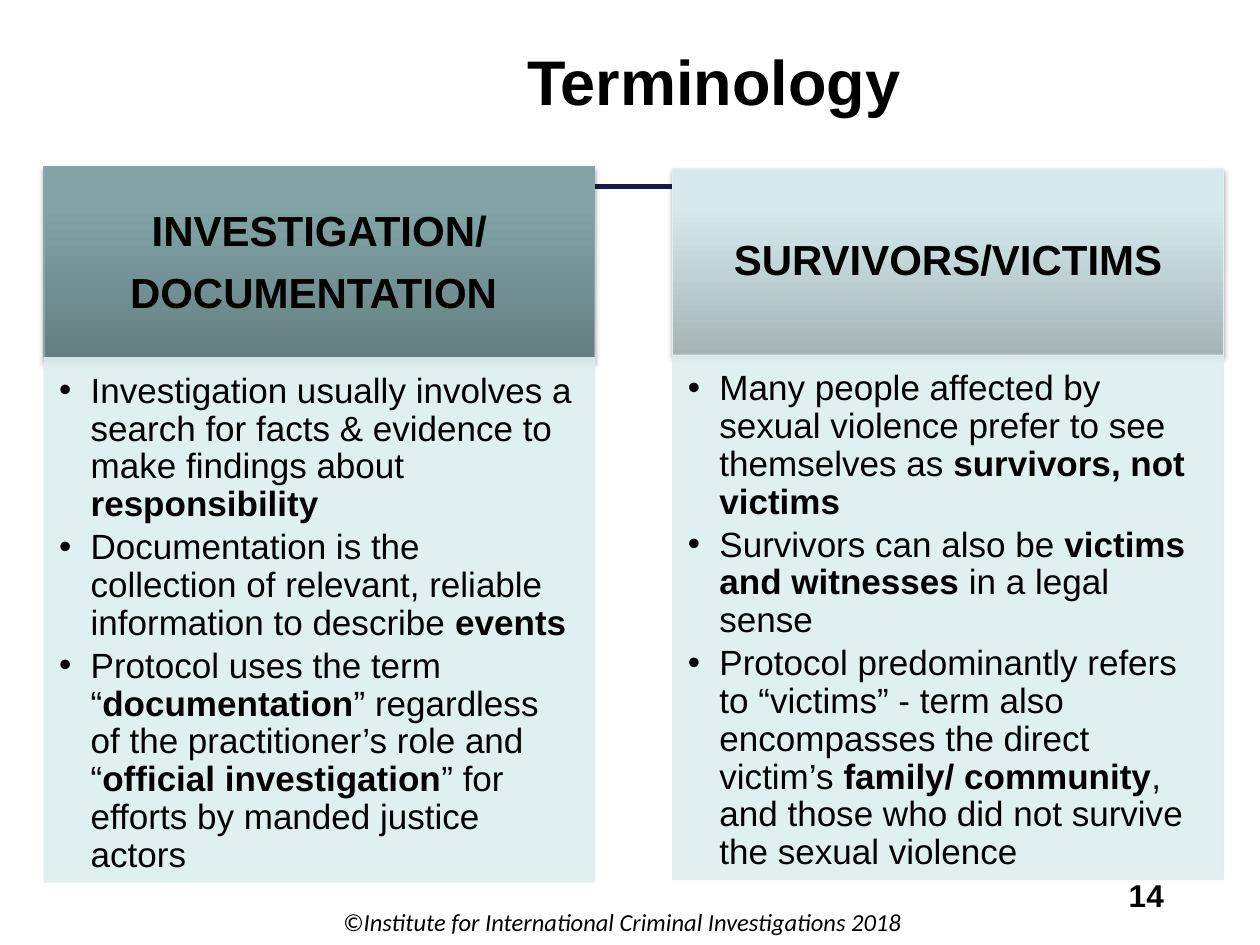
from copy import deepcopy
from dataclasses import dataclass

from lxml import etree
from pptx import Presentation
from pptx.dml.color import RGBColor
from pptx.enum.shapes import MSO_CONNECTOR, MSO_SHAPE
from pptx.enum.text import MSO_ANCHOR, PP_ALIGN
from pptx.oxml.ns import qn
from pptx.util import Inches, Pt

RECTANGLE, STRAIGHT = MSO_SHAPE.RECTANGLE, MSO_CONNECTOR.STRAIGHT
LEFT, CENTER = PP_ALIGN.LEFT, PP_ALIGN.CENTER
TOP, MIDDLE, BOTTOM = MSO_ANCHOR.TOP, MSO_ANCHOR.MIDDLE, MSO_ANCHOR.BOTTOM


@dataclass(frozen=True)
class Theme:
    font: str = "Arial"
    footer_font: str = "Calibri"
    text: str = "000000"
    rule: str = "19194D"
    panel: str = "DDEFF0"
    teal: tuple = ("647E81", "82A4A7", "82A6A9")
    teal_edge: str = "8AA6A8"
    pale: tuple = ("A5B5B6", "D6EAEC", "D6ECEE")
    pale_edge: str = "DFF0F1"
    title_size: int = 36
    heading_size: int = 24
    body_size: int = 20
    number_size: int = 18
    footer_size: int = 14


def rgb(value):
    return RGBColor.from_string(value)


def add_xml(parent, tag, **attributes):
    values = {name: str(value) for name, value in attributes.items()}
    return etree.SubElement(parent, qn(tag), values)


class SlideBuilder:
    def __init__(self, slide, theme):
        self.slide = slide
        self.theme = theme

    def fill_text(self, shape, paragraphs, size, anchor=TOP, align=LEFT,
                  insets=(0.1, 0.05, 0.1, 0.05), bullets=False, spacing=None, font=None,
                  **run_format):
        """Put paragraphs in a shape; parts between * marks are bold."""
        frame = shape.text_frame
        frame_format = {"word_wrap": True, "vertical_anchor": anchor}
        sides = ("margin_left", "margin_top", "margin_right", "margin_bottom")
        frame_format.update(zip(sides, map(Inches, insets)))
        for name, value in frame_format.items():
            setattr(frame, name, value)
        for index, text in enumerate(paragraphs):
            paragraph = frame.add_paragraph() if index else frame.paragraphs[0]
            paragraph.alignment = align
            if spacing is not None:
                paragraph.line_spacing = 0.9
                paragraph.space_after = Pt(spacing)
            if bullets:
                properties = paragraph._p.get_or_add_pPr()
                properties.set("marL", str(Inches(0.25)))
                properties.set("indent", str(-Inches(0.25)))
                add_xml(properties, "a:buFont", typeface=self.theme.font)
                add_xml(properties, "a:buChar", char="•")
            for part, words in enumerate(text.split("*")):
                if not words:
                    continue
                run = paragraph.add_run()
                run.text = words
                run_style = {"name": font or self.theme.font, "size": Pt(size),
                             "bold": part % 2 == 1, **run_format}
                for name, value in run_style.items():
                    setattr(run.font, name, value)
                run.font.color.rgb = rgb(self.theme.text)

    def text(self, box, text, size, **style):
        self.fill_text(self.slide.shapes.add_textbox(*map(Inches, box)), [text], size, **style)

    def rule(self, start, end):
        line = self.slide.shapes.add_connector(STRAIGHT, *map(Inches, start + end))
        line.line.color.rgb = rgb(self.theme.rule)
        line.line.width = Pt(2.5)
        add_xml(line._element.spPr, "a:effectLst")

    def rectangle(self, box, edge):
        shape = self.slide.shapes.add_shape(RECTANGLE, *map(Inches, box))
        shape.shadow.inherit = False
        shape.line.color.rgb = rgb(edge)
        shape.line.width = Pt(0.75)
        return shape

    def heading(self, box, lines, colors, edge):
        shape = self.rectangle(box, edge)
        shape.fill.gradient()
        shape.fill.gradient_angle = 90
        properties = shape._element.spPr
        stops = properties.find(".//" + qn("a:gsLst"))
        stops.append(deepcopy(stops[-1]))
        for stop, position, color in zip(shape.fill.gradient_stops, (0, 0.8, 1), colors):
            stop.position = position
            stop.color.rgb = rgb(color)
        shadow = add_xml(properties.find(qn("a:effectLst")), "a:outerShdw", blurRad=Pt(3.1),
                         dist=Pt(1.8), dir=5400000, rotWithShape=0)
        add_xml(add_xml(shadow, "a:srgbClr", val="000000"), "a:alpha", val=35000)
        self.fill_text(shape, lines, self.theme.heading_size, anchor=MIDDLE, align=CENTER,
                       insets=(0.19, 0.11, 0.19, 0.11), spacing=9.5, bold=True)

    def panel(self, box, points):
        shape = self.rectangle(box, self.theme.panel)
        shape.fill.solid()
        shape.fill.fore_color.rgb = rgb(self.theme.panel)
        for color in shape._element.spPr.iter(qn("a:srgbClr")):
            add_xml(color, "a:alpha", val=90000)
        self.fill_text(shape, points, self.theme.body_size, insets=(0.12, 0.12, 0.16, 0.17),
                       bullets=True, spacing=3)


def main():
    theme = Theme()
    presentation = Presentation()
    presentation.slide_width, presentation.slide_height = Inches(10), Inches(7.5)
    slide = presentation.slides.add_slide(presentation.slide_layouts[6])
    builder = SlideBuilder(slide, theme)

    builder.rule((9.49, 1.48), (0.53, 1.48))
    builder.text((1.61, 0.29, 8.11, 0.7), "Terminology", theme.title_size,
                 anchor=MIDDLE, align=CENTER, bold=True)
    builder.text((2.32, 6.9, 5.24, 0.55),
                 "©Institute for International Criminal Investigations 2018",
                 theme.footer_size, anchor=BOTTOM, align=CENTER, insets=(0.1, 0.05, 0.1, 0.02),
                 font=theme.footer_font, italic=True)
    builder.text((8.86, 6.9, 0.79, 0.4), "14", theme.number_size, bold=True)

    column_width, panel_height = 4.37, 4.16
    columns = [
        (0.35, 1.32, 1.55, 2.84, theme.teal, theme.teal_edge,
         ["INVESTIGATION/", "DOCUMENTATION "],
         ["Investigation usually involves a search for facts & evidence to make findings about "
          "*responsibility*",
          "Documentation is the collection of relevant, reliable information to describe *events*",
          "Protocol uses the term “*documentation*” regardless of the practitioner’s role and "
          "“*official investigation*” for efforts by manded justice actors"]),
        (5.34, 1.34, 1.48, 2.82, theme.pale, theme.pale_edge,
         ["SURVIVORS/VICTIMS"],
         ["Many people affected by sexual violence prefer to see themselves as "
          "*survivors, not victims*",
          "Survivors can also be *victims and witnesses* in a legal sense",
          "Protocol predominantly refers to “victims” - term also encompasses the direct "
          "victim’s *family/ community*, and those who did not survive the sexual violence"]),
    ]
    for left, top, heading_height, panel_top, colors, edge, heading, points in columns:
        builder.heading((left, top, column_width, heading_height), heading, colors, edge)
        builder.panel((left, panel_top, column_width, panel_height), points)

    presentation.save("out.pptx")


if __name__ == "__main__":
    main()
